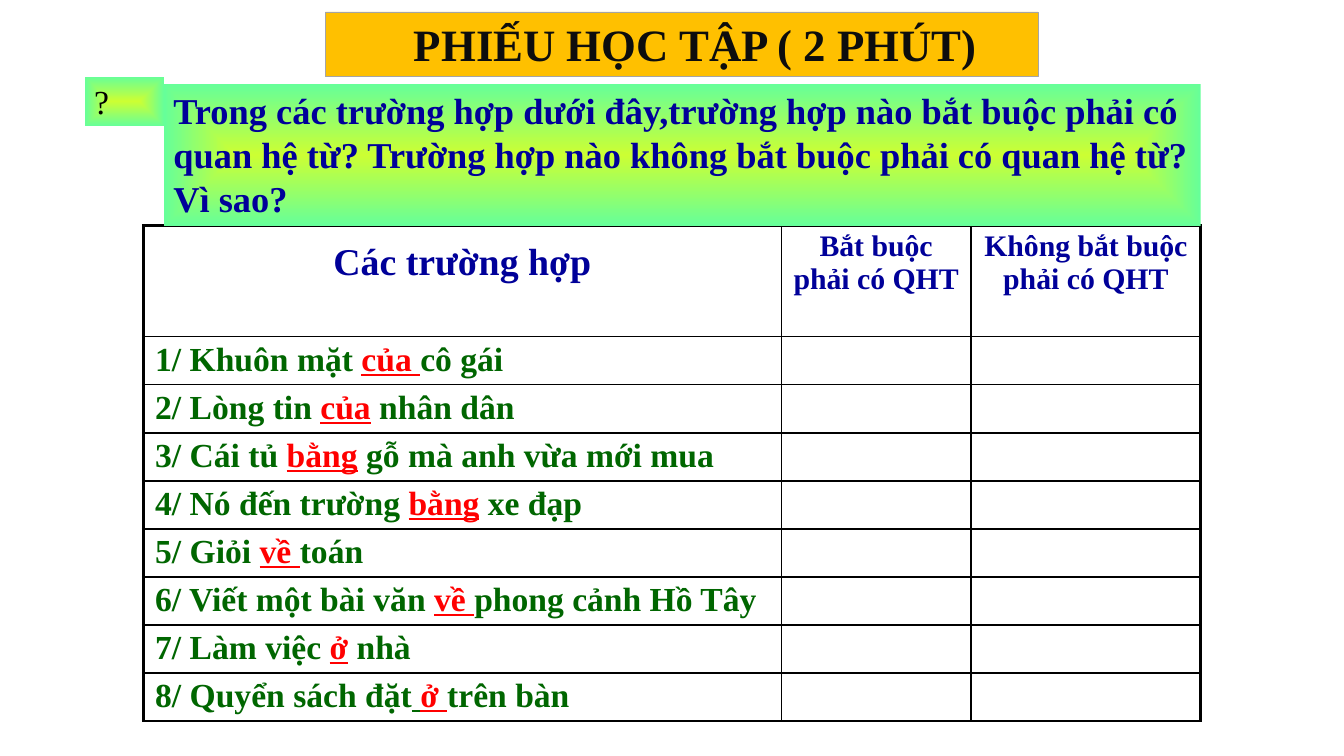
"""Build a Vietnamese grammar worksheet slide with a table of eight cases."""
import pptx
import pptx.util
import pptx.dml.color
import pptx.enum.text
import pptx.oxml
from dataclasses import dataclass
from pptx.util import Cm, Pt


@dataclass(frozen=True)
class Theme:
    font: str = "Times New Roman"
    navy: str = "000099"
    green: str = "006600"
    red: str = "FF0000"
    black: str = "000000"
    ink: str = "0D0D0D"
    gold: str = "FFC000"
    gray: str = "A5A5A5"
    lime: str = "CCFF33"
    mint: str = "66FF99"
    white: str = "FFFFFF"
    title: float = 32
    ask: float = 26
    mark: float = 24
    case: float = 24
    head: float = 27
    side: float = 21.3


theme = Theme()
rgb = pptx.dml.color.RGBColor.from_string
align = pptx.enum.text.PP_ALIGN
NS = 'xmlns:a="http://schemas.openxmlformats.org/drawingml/2006/main"'


def style(para, size, color, bold=True):
    font = para.font
    font.name, font.size, font.bold = theme.font, Pt(size), bold
    font.color.rgb = rgb(color)


def add_box(place, text, size, color, bold, inset):
    box = slide.shapes.add_shape(1, *[Cm(n) for n in place])
    box.shadow.inherit = False
    box.line.fill.background()
    frame = box.text_frame
    frame.word_wrap = True
    frame.vertical_anchor = pptx.enum.text.MSO_ANCHOR.TOP
    frame.margin_left, frame.margin_right = Cm(inset), Cm(0.23)
    frame.margin_top = frame.margin_bottom = Cm(0.11)
    para = frame.paragraphs[0]
    para.text, para.alignment = text, align.LEFT
    style(para, size, color, bold)
    return box


deck = pptx.Presentation()
deck.slide_width, deck.slide_height = Cm(33.87), Cm(19.05)
slide = deck.slides.add_slide(deck.slide_layouts[6])

heads = [
    ("Các trường hợp", theme.head, 0.4),
    ("Bắt buộc phải có QHT", theme.side, 0.11),
    ("Không bắt buộc phải có QHT", theme.side, 0.11),
]
cases = [
    [("1/ Khuôn mặt ", "green"), ("của ", "link"), ("cô gái", "green")],
    [("2/ Lòng tin ", "green"), ("của", "link"), (" nhân dân", "green")],
    [("3/ Cái tủ ", "green"), ("bằng", "link"), (" gỗ mà anh vừa mới mua", "green")],
    [("4/ Nó đến trường ", "green"), ("bằng", "link"), (" xe đạp", "green")],
    [("5/ Giỏi ", "green"), ("về ", "link"), ("toán", "green")],
    [("6/ Viết một bài văn ", "green"), ("về ", "link"), ("phong cảnh Hồ Tây", "green")],
    [("7/ Làm việc ", "green"), ("ở", "link"), (" nhà", "green")],
    [("8/ Quyển sách đặt", "green"), (" ", "line"), ("ở ", "link"), ("trên bàn", "green")],
]
wide = [16.08, 4.78, 5.79]
tall = [2.8] + [1.21] * len(cases)
grid = slide.shapes.add_table(
    len(tall), len(wide), Cm(3.61), Cm(5.69), Cm(sum(wide)), Cm(sum(tall))
).table
for col, width in zip(grid.columns, wide):
    col.width = Cm(width)
for row, height in zip(grid.rows, tall):
    row.height = Cm(height)

for r in range(len(tall)):
    for c in range(len(wide)):
        cell = grid.cell(r, c)
        cell.margin_left = cell.margin_right = Cm(0.3)
        cell.margin_top = cell.margin_bottom = Cm(0.11)
        outer = {"L": c == 0, "R": c == len(wide) - 1, "T": r == 0, "B": r == len(tall) - 1}
        props = cell._tc.get_or_add_tcPr()
        for side, thick in outer.items():
            props.append(pptx.oxml.parse_xml(
                f'<a:ln{side} {NS} w="{Pt(2.25 if thick else 1)}"><a:solidFill>'
                f'<a:srgbClr val="{theme.black}"/></a:solidFill></a:ln{side}>'
            ))
        cell.fill.solid()
        cell.fill.fore_color.rgb = rgb(theme.white)
        para = cell.text_frame.paragraphs[0]
        if r == 0:
            text, size, top = heads[c]
            cell.margin_top = Cm(top)
            para.text, para.alignment = text, align.CENTER
            style(para, size, theme.navy)
        elif c == 0:
            style(para, theme.case, theme.green)
            for text, kind in cases[r - 1]:
                run = para.add_run()
                run.text = text
                if kind != "green":
                    run.font.underline = True
                if kind == "link":
                    run.font.color.rgb = rgb(theme.red)

ask = (
    "Trong các trường hợp dưới đây,trường hợp nào bắt buộc phải có quan hệ từ? "
    "Trường hợp nào không bắt buộc phải có quan hệ từ? Vì sao?"
)
mark = add_box((2.14, 1.93, 2, 1.25), "?", theme.mark, theme.black, False, 0.23)
panel = add_box((4.14, 2.12, 26.12, 3.57), ask, theme.ask, theme.navy, True, 0.23)
for box in (mark, panel):
    box.fill.gradient()
    old = box._element.spPr.find(pptx.oxml.ns.qn("a:gradFill"))
    old.getparent().replace(old, pptx.oxml.parse_xml(
        f'<a:gradFill {NS} rotWithShape="1"><a:gsLst>'
        f'<a:gs pos="0"><a:srgbClr val="{theme.lime}"/></a:gs>'
        f'<a:gs pos="100000"><a:srgbClr val="{theme.mint}"/></a:gs></a:gsLst>'
        '<a:path path="shape"><a:fillToRect l="50000" t="50000" r="50000" b="50000"/>'
        '</a:path></a:gradFill>'
    ))

title = add_box(
    (8.2, 0.3, 17.96, 1.63), "PHIẾU HỌC TẬP ( 2 PHÚT)", theme.title, theme.ink, True, 2.23
)
title.fill.solid()
title.fill.fore_color.rgb = rgb(theme.gold)
title.line.color.rgb = rgb(theme.gray)
title.line.width = Pt(0.5)

deck.save("out.pptx")
